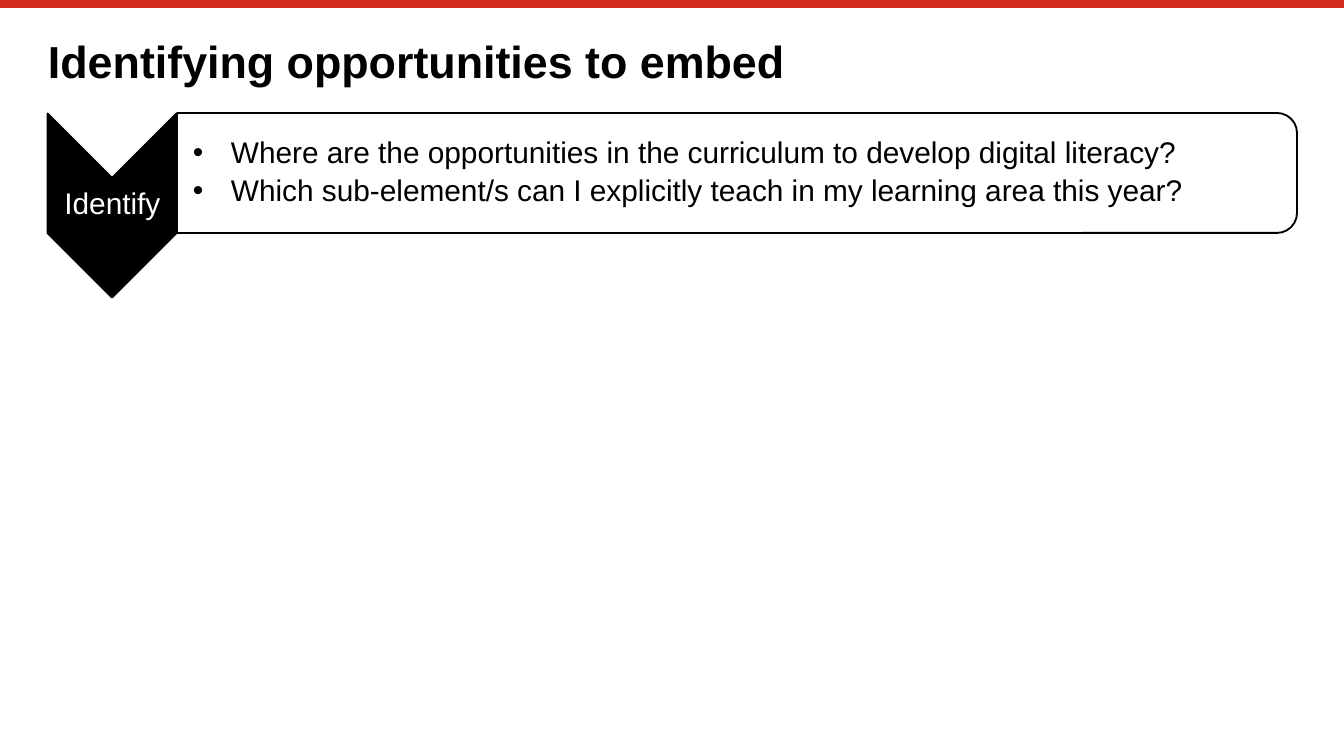
from pptx import Presentation
from pptx.dml.color import RGBColor as RGB
from pptx.enum.shapes import MSO_CONNECTOR as Conn, MSO_SHAPE as Kind
from pptx.enum.text import MSO_ANCHOR as Anchor, PP_ALIGN as Align
from pptx.oxml.ns import qn
from pptx.util import Pt
from lxml.etree import SubElement as Sub

PX = 914400 / 134.4
COLORS = {"red": "D52B1E", "black": "000000", "white": "FFFFFF"}
QUERIES = [
    "Where are the opportunities in the curriculum to develop digital literacy?",
    "Which sub-element/s can I explicitly teach in my learning area this year?",
]


def px(n):
    return round(n * PX)


def color(name):
    return RGB.from_string(COLORS[name])


def apply(item, values):
    for key, value in values.items():
        setattr(item, key, value)


def add_bar(slide, y, width):
    bar = slide.shapes.add_connector(Conn.STRAIGHT, 0, px(y), px(1344), px(y))
    bar.line.color.rgb = color("red")
    bar.line.width = Pt(width)
    Sub(bar._element.spPr, qn("a:effectLst"))


def add_block(slide, kind, box, fill=None):
    block = slide.shapes.add_shape(kind, *map(px, box))
    block.rotation = 90
    block.shadow.inherit = False
    if fill:
        block.fill.solid()
        block.fill.fore_color.rgb = color(fill)
    else:
        block.fill.background()
    block.line.color.rgb = color("black")
    block.line.width = Pt(1)


def add_bullet(para, indent):
    props = para._p.get_or_add_pPr()
    props.set("marL", str(px(indent)))
    props.set("indent", str(-px(indent)))
    Sub(props, qn("a:buFont"), typeface="Arial")
    Sub(props, qn("a:buChar"), char="•")


def add_text(slide, box, lines, font, frame, para=None, indent=0):
    body = slide.shapes.add_textbox(*map(px, box)).text_frame
    apply(body, {"word_wrap": True, "margin_left": px(1), "margin_right": px(1),
                 "margin_top": px(1), "margin_bottom": px(1), **frame})
    for i, line in enumerate(lines):
        part = body.paragraphs[0] if i == 0 else body.add_paragraph()
        apply(part, {"line_spacing": 0.9, **(para or {})})
        if indent:
            add_bullet(part, indent)
        run = part.add_run()
        run.text = line
        tint, *rest = font
        run.font.color.rgb = color(tint)
        apply(run.font, dict(zip(("size", "bold"), rest), name="Arial"))


def main():
    deck = Presentation()
    apply(deck, {"slide_width": px(1344), "slide_height": px(756)})
    slide = deck.slides.add_slide(deck.slide_layouts[6])

    # Top bar and title
    add_bar(slide, 4, 4.2)
    flush = dict.fromkeys(
        ("margin_left", "margin_right", "margin_top", "margin_bottom"), 0)
    add_text(slide, (48, 40, 1249, 53), ["Identifying opportunities to embed"],
             ("black", Pt(24), True), flush)

    # Step arrow and its label
    middle = {"vertical_anchor": Anchor.MIDDLE}
    add_block(slide, Kind.CHEVRON, (20, 141, 184, 129), "black")
    add_text(slide, (48, 177, 129, 55), ["Identify"],
             ("white", Pt(16), False), middle, {"alignment": Align.CENTER})

    # Panel of questions
    add_block(slide, Kind.ROUND_2_SAME_RECTANGLE, (677, -387, 120, 1120))
    add_text(slide, (177, 119, 1114, 108), QUERIES, ("black", Pt(16), False),
             {**middle, "margin_left": px(16)}, {"space_after": Pt(3)}, 38)

    deck.save("out.pptx")


if __name__ == "__main__":
    main()
